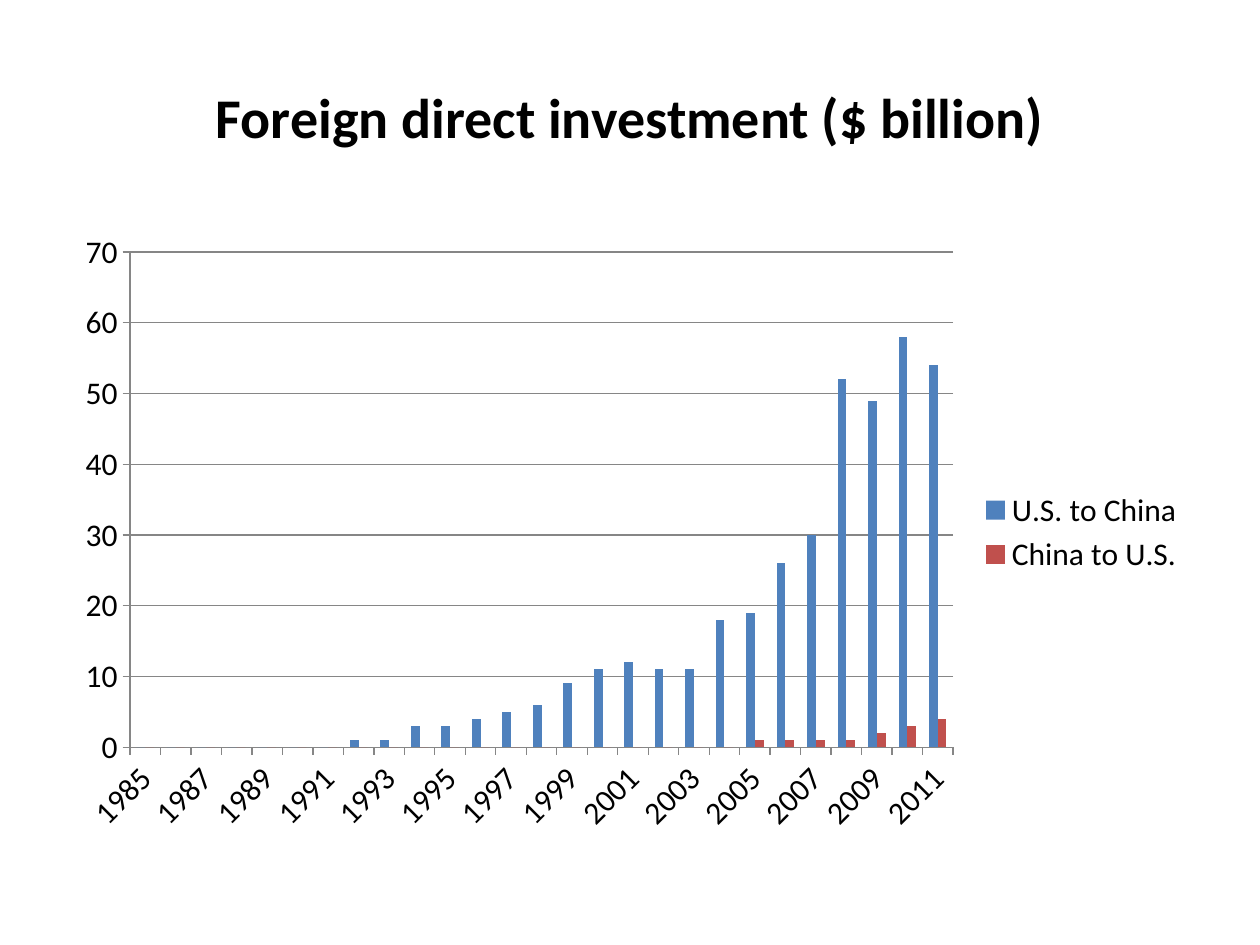
from pptx import Presentation
from pptx.chart.data import CategoryChartData
from pptx.dml.color import RGBColor
from pptx.enum import chart as ch, text as tx
from pptx.util import Inches, Pt

BLACK = RGBColor(0, 0, 0)
GRAY = RGBColor(0x86, 0x86, 0x86)
BLUE = RGBColor(0x4F, 0x81, 0xBD)
RED = RGBColor(0xC0, 0x50, 0x4D)
FACE = "Calibri"


def style(font, size, bold=False):
    font.name, font.size, font.bold = FACE, Pt(size), bold
    font.color.rgb = BLACK


def add_text(slide, words, left, top, width, height, size=18, bold=False):
    box = slide.shapes.add_textbox(Inches(left), Inches(top), Inches(width), Inches(height))
    frame = box.text_frame
    frame.word_wrap = True
    frame.vertical_anchor = tx.MSO_ANCHOR.MIDDLE
    para = frame.paragraphs[0]
    para.alignment = tx.PP_ALIGN.CENTER
    run = para.add_run()
    run.text = words
    style(run.font, size, bold)


prs = Presentation()
prs.slide_width, prs.slide_height = Inches(10), Inches(7.5)
slide = prs.slides.add_slide(prs.slide_layouts[6])

add_text(slide, "Foreign direct investment ($ billion)", 0.5, 0.3, 9, 1.25, size=32, bold=True)

# Yearly flows, 1985 to 2011
flows = [
    ("U.S. to China", BLUE, [0] * 7 + [1, 1, 3, 3, 4, 5, 6, 9, 11, 12, 11, 11, 18,
                                       19, 26, 30, 52, 49, 58, 54]),
    ("China to U.S.", RED, [0] * 20 + [1, 1, 1, 1, 2, 3, 4]),
]
data = CategoryChartData()
data.categories = [str(year) for year in range(1985, 2012)]
for name, _, vals in flows:
    data.add_series(name, vals)

chart = slide.shapes.add_chart(ch.XL_CHART_TYPE.COLUMN_CLUSTERED, Inches(0.5), Inches(1.75),
                               Inches(9), Inches(4.95), data).chart
style(chart.font, 18)
chart.has_title = False
chart.has_legend = True
chart.legend.position = ch.XL_LEGEND_POSITION.RIGHT
chart.legend.include_in_layout = False

plot = chart.plots[0]
plot.gap_width, plot.overlap = 150, 0
plot.vary_by_categories = False
for bars, (_, color, _) in zip(plot.series, flows):
    bars.format.fill.solid()
    bars.format.fill.fore_color.rgb = color
    bars.invert_if_negative = False

scale = chart.value_axis
scale.minimum_scale, scale.maximum_scale, scale.major_unit = 0, 70, 10
scale.has_major_gridlines = True
for axis in (chart.category_axis, scale):
    axis.major_tick_mark = ch.XL_TICK_MARK.OUTSIDE
    axis.minor_tick_mark = ch.XL_TICK_MARK.NONE
for part in (chart.category_axis, scale, scale.major_gridlines):
    part.format.line.color.rgb = GRAY
    part.format.line.width = Pt(0.75)

prs.save("out.pptx")
